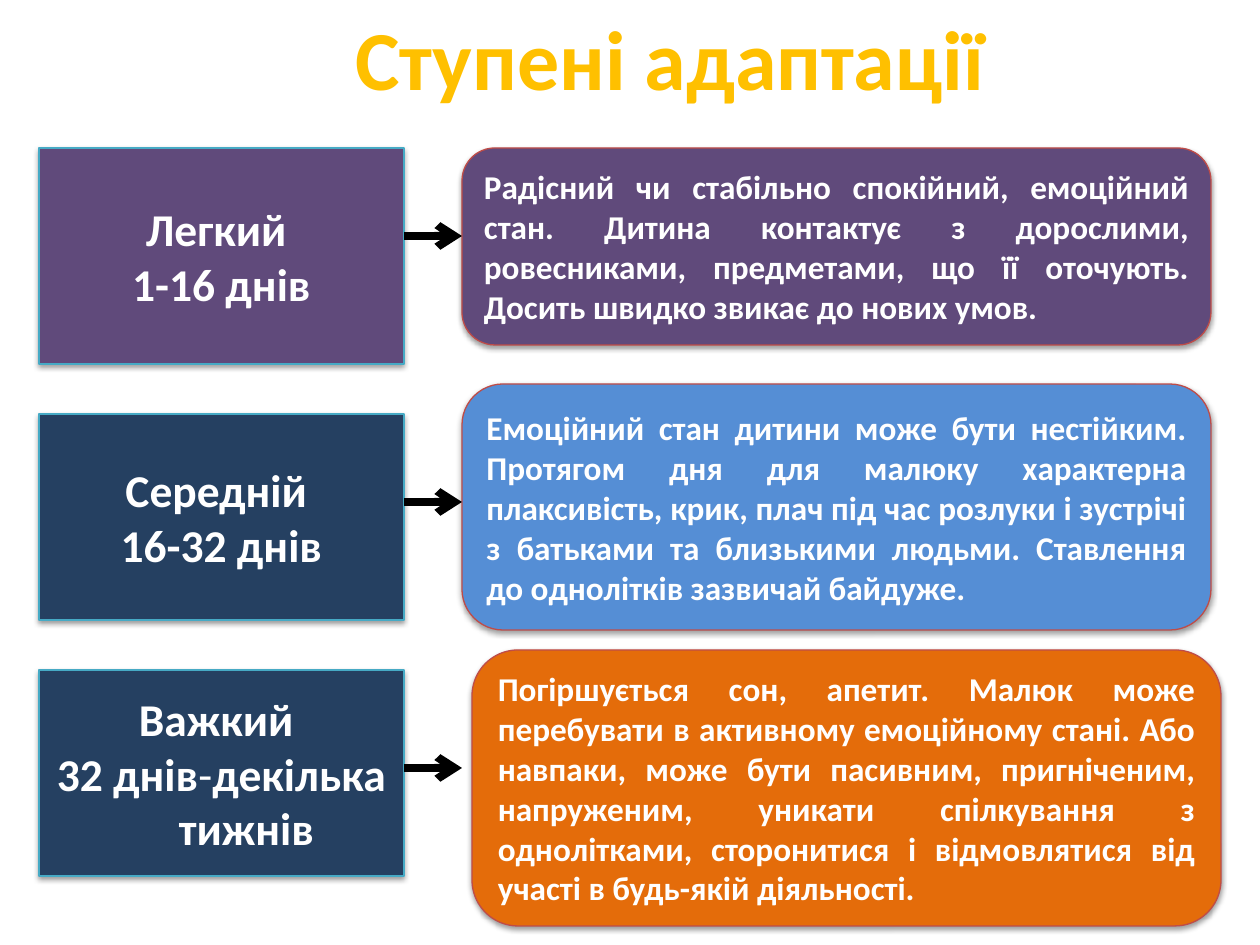
import pptx
import pptx.dml.color
import pptx.enum.shapes
import pptx.enum.text
import pptx.oxml
import pptx.oxml.ns
import pptx.util

PX = 914400 / 126
SHAPE = pptx.enum.shapes.MSO_SHAPE
ALIGN = pptx.enum.text.PP_ALIGN
NS = pptx.oxml.ns.nsdecls("a")
SHADOW = (
    f'<a:effectLst {NS}><a:outerShdw blurRad="39400" dist="20300" dir="5400000" rotWithShape="0">'
    '<a:srgbClr val="000000"><a:alpha val="38000"/></a:srgbClr></a:outerShdw></a:effectLst>'
)


def px(*lengths):
    """Turn px lengths into EMU."""
    return [pptx.util.Emu(round(n * PX)) for n in lengths]


def style(target, color):
    """Give a fill, line or font colour object a hex colour."""
    target.rgb = pptx.dml.color.RGBColor.from_string(color)


prs = pptx.Presentation()
prs.slide_width, prs.slide_height = px(1260, 945)
s = prs.slides.add_slide(prs.slide_layouts[6])

sp = s.shapes.add_textbox(*px(263, 0, 814, 115))
tf = sp.text_frame
tf.word_wrap = True
p = tf.paragraphs[0]
p.alignment = ALIGN.CENTER
r = p.add_run()
r.text = "Ступені адаптації"
r.font.name, r.font.size, r.font.bold = "Calibri", pptx.util.Pt(48), True
style(r.font.color, "FFC000")

# A paragraph is its left margin and its runs; a run is text and bold
boxes = [
    (SHAPE.RECTANGLE, (39, 148, 365, 216), "604A7B",
     [(0, [("Легкий ", True)]), (0, [("1-16 днів", True)])]),
    (SHAPE.RECTANGLE, (39, 414, 365, 206), "254061",
     [(0, [("Середній ", True)]), (0, [("16-32 днів", True)])]),
    (SHAPE.RECTANGLE, (39, 670, 365, 206), "254061",
     [(0, [("Важкий ", True)]),
      (0, [("32 днів", True), ("-", False), ("декілька", True)]),
      (50, [("тижнів", True)])]),
    (SHAPE.ROUNDED_RECTANGLE, (462, 148, 749, 197), "604A7B",
     [(0, [("Радісний чи стабільно спокійний, емоційний стан. Дитина контактує з дорослими, "
            "ровесниками, предметами, що її оточують. Досить швидко звикає до нових умов.", True)])]),
    (SHAPE.ROUNDED_RECTANGLE, (462, 384, 749, 246), "558ED5",
     [(0, [("Емоційний стан дитини може бути нестійким. Протягом дня для малюку характерна "
            "плаксивість, крик, плач під час розлуки і зустрічі з батьками та близькими людьми. "
            "Ставлення до однолітків зазвичай байдуже. ", True)])]),
    (SHAPE.ROUNDED_RECTANGLE, (472, 650, 749, 276), "E46C0A",
     [(0, [("Погіршується сон, апетит. Малюк може перебувати в активному емоційному стані. "
            "Або навпаки, може бути пасивним, пригніченим, напруженим, уникати спілкування з "
            "однолітками, сторонитися і відмовлятися від участі в будь-якій діяльності.", True)])]),
]
for kind, box, fill, paragraphs in boxes:
    is_stage = kind == SHAPE.RECTANGLE
    sp = s.shapes.add_shape(kind, *px(*box))
    sp.fill.solid()
    style(sp.fill.fore_color, fill)
    style(sp.line.color, "46AAC5" if is_stage else "BF4C48")
    sp.line.width = pptx.util.Pt(0.75)
    sp._element.spPr.append(pptx.oxml.parse_xml(SHADOW))
    tf = sp.text_frame
    tf.word_wrap = True
    tf.vertical_anchor = pptx.enum.text.MSO_ANCHOR.MIDDLE
    for i, (margin, runs) in enumerate(paragraphs):
        p = tf.add_paragraph() if i else tf.paragraphs[0]
        p.alignment = ALIGN.CENTER if is_stage else ALIGN.JUSTIFY
        if margin:
            p._p.get_or_add_pPr().set("marL", str(px(margin)[0]))
        for text, bold in runs:
            r = p.add_run()
            r.text = text
            r.font.name, r.font.bold = "Calibri", bold
            r.font.size = pptx.util.Pt(26 if is_stage else 19)
            style(r.font.color, "FFFFFF")

for y in range(236, 769, 266):
    arrow = s.shapes.add_connector(pptx.enum.shapes.MSO_CONNECTOR.STRAIGHT, *px(404, y, 462, y))
    style(arrow.line.color, "000000")
    arrow.line.width = pptx.util.Pt(4.5)
    arrow.line._get_or_add_ln().append(pptx.oxml.parse_xml(f'<a:tailEnd {NS} type="arrow"/>'))
    arrow._element.spPr.append(pptx.oxml.parse_xml(f"<a:effectLst {NS}/>"))

prs.save("out.pptx")
